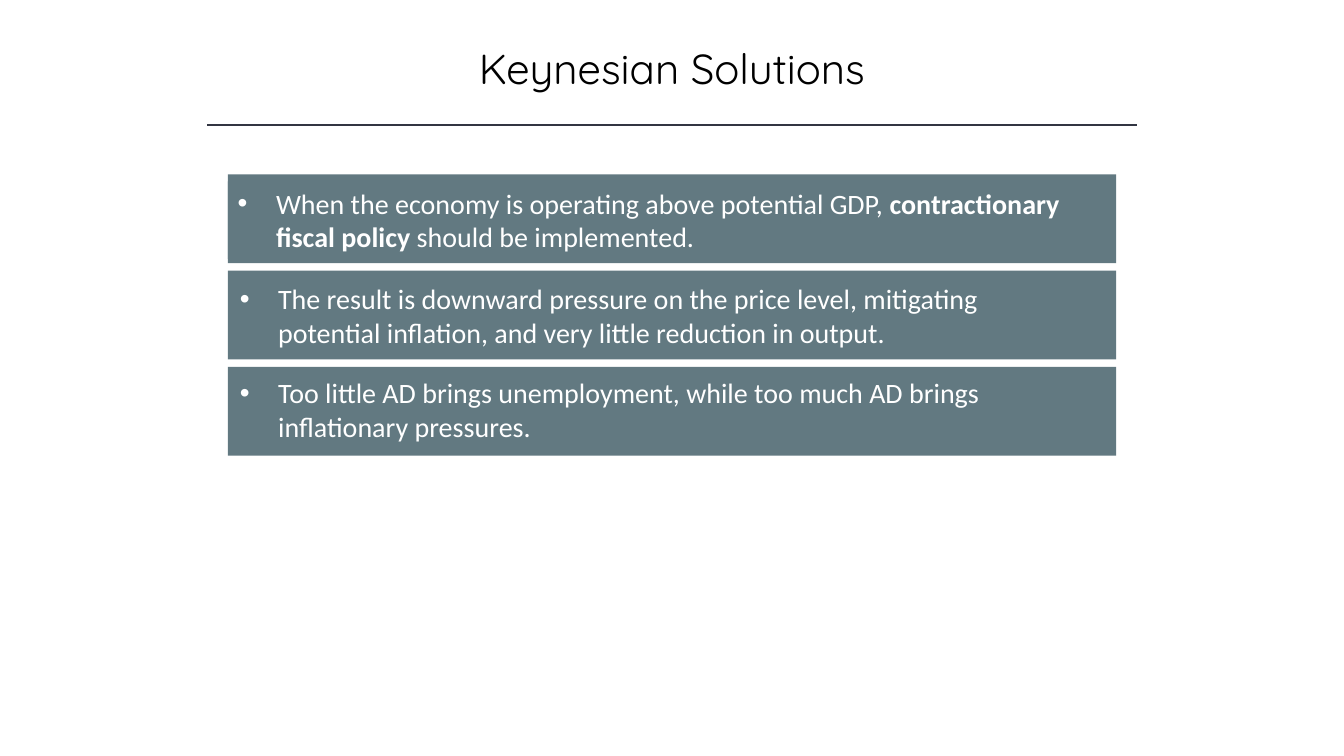
from pptx import Presentation
from pptx.util import Inches, Pt
from pptx.dml.color import RGBColor
from pptx.enum.shapes import MSO_CONNECTOR, MSO_SHAPE
from pptx.enum.text import MSO_ANCHOR, PP_ALIGN
from lxml.etree import SubElement
from pptx.oxml.ns import qn

THEME = {
    "title": {"font": "Quicksand", "size": 30, "color": "000000"},
    "body": {"font": "Calibri", "size": 20, "color": "FFFFFF"},
    "bar": "627981",
    "rule": "323542",
}
W, H = 13.33, 7.5


def add_text(shape, runs, font, size, color, align=PP_ALIGN.LEFT, bullet=False):
    """Write (text, bold) runs as one paragraph."""
    tf = shape.text_frame
    tf.word_wrap = True
    tf.vertical_anchor = MSO_ANCHOR.TOP
    p = tf.paragraphs[0]
    p.alignment = align
    if bullet:
        pPr = p._p.get_or_add_pPr()
        pPr.set("marL", str(Inches(0.38)))
        pPr.set("indent", str(-Inches(0.38)))
        SubElement(pPr, qn("a:buFont")).set("typeface", "Arial")
        SubElement(pPr, qn("a:buChar")).set("char", "•")
    for text, bold in runs:
        r = p.add_run()
        r.text = text
        r.font.name, r.font.size, r.font.bold = font, Pt(size), bold
        r.font.color.rgb = RGBColor.from_string(color)


def add_bar(s, left, top, width, height):
    sp = s.shapes.add_shape(MSO_SHAPE.RECTANGLE, Inches(left), Inches(top),
                            Inches(width), Inches(height))
    sp.shadow.inherit = False
    sp.fill.solid()
    sp.fill.fore_color.rgb = RGBColor.from_string(THEME["bar"])
    sp.line.fill.background()
    return sp


prs = Presentation()
prs.slide_width, prs.slide_height = Inches(W), Inches(H)
s = prs.slides.add_slide(prs.slide_layouts[6])

# Title, centred on the slide
title_w = 10
title = s.shapes.add_textbox(Inches((W - title_w) / 2), Inches(0.37),
                             Inches(title_w), Inches(0.61))
add_text(title, [("Keynesian Solutions", False)], align=PP_ALIGN.CENTER, **THEME["title"])

# Rule under the title
rule_w, rule_y = 9.22, 1.24
rule = s.shapes.add_connector(MSO_CONNECTOR.STRAIGHT,
                              Inches((W - rule_w) / 2), Inches(rule_y),
                              Inches((W + rule_w) / 2), Inches(rule_y))
rule.line.color.rgb = RGBColor.from_string(THEME["rule"])
rule.line.width = Pt(1)
SubElement(rule._element.spPr, qn("a:effectLst"))

# Bars at an equal pitch: text inset from left, from top, text width, runs
bar_w, bar_h, bar_top, pitch = 8.81, 0.88, 1.73, 0.955
bar_left = (W - bar_w) / 2
points = [
    (0, 0.07, 8.54, [
        ("When the economy is operating above potential GDP, ", False),
        ("contractionary fiscal policy", True),
        (" should be implemented.", False)]),
    (0.02, 0.06, 8.5, [
        ("The result is downward pressure on the price level, mitigating "
         "potential inflation, and very little reduction in output.", False)]),
    (0.02, 0.04, 8.78, [
        ("Too little AD brings unemployment, while too much AD brings "
         "inflationary pressures.", False)]),
]
for i, (dx, dy, text_w, runs) in enumerate(points):
    top = bar_top + i * pitch
    add_bar(s, bar_left, top, bar_w, bar_h)
    label = add_bar(s, bar_left + dx, top + dy, text_w, 0.77)
    add_text(label, runs, bullet=True, **THEME["body"])

prs.save("out.pptx")
